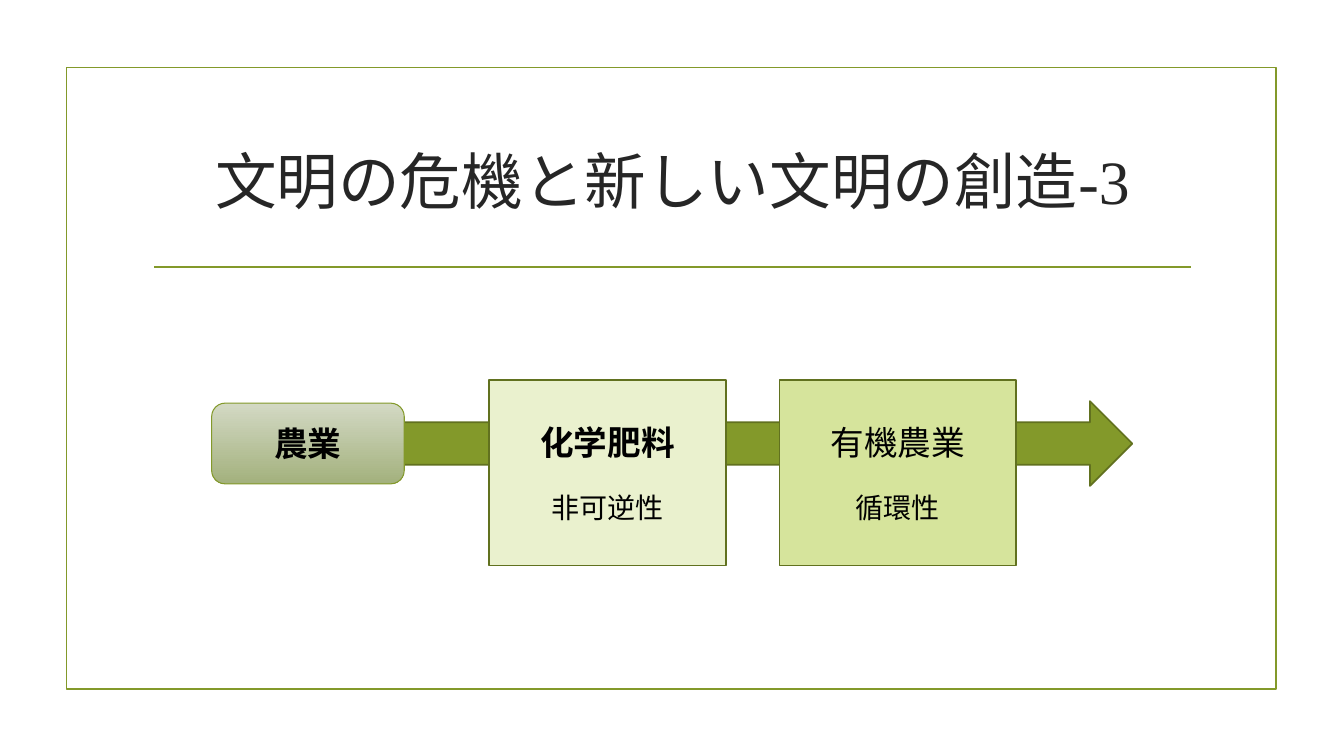
from lxml import etree
from pptx import Presentation
from pptx.dml.color import RGBColor
from pptx.enum.shapes import MSO_CONNECTOR, MSO_SHAPE
from pptx.enum.text import MSO_ANCHOR, MSO_AUTO_SIZE, PP_ALIGN
from pptx.oxml.ns import qn
from pptx.util import Inches, Pt

OLIVE = RGBColor(0x83, 0x99, 0x2A)
DARK_OLIVE = RGBColor(0x61, 0x71, 0x1F)
PALE_GREEN = RGBColor(0xEA, 0xF1, 0xCE)
LIGHT_GREEN = RGBColor(0xD6, 0xE4, 0x9C)
SAGE_TOP = RGBColor(0xD3, 0xD9, 0xC4)
SAGE_BOTTOM = RGBColor(0xA3, 0xB1, 0x7D)
CHARCOAL = RGBColor(0x26, 0x26, 0x26)
BLACK = RGBColor(0x00, 0x00, 0x00)

deck = Presentation()
deck.slide_width = Inches(13.33)
deck.slide_height = Inches(7.5)
column = deck.slide_width / 100
row = deck.slide_height / 100
page = deck.slides.add_slide(deck.slide_layouts[5])


def add_box(kind, left, top, width, height, line=DARK_OLIVE, weight=1.25, fill=None):
    """Add a preset shape, placed in percent of the slide's size."""
    box = page.shapes.add_shape(kind, int(left * column), int(top * row),
                                int(width * column), int(height * row))
    box.shadow.inherit = False
    box.line.color.rgb = line
    box.line.width = Pt(weight)
    if fill is None:
        box.fill.background()
    else:
        box.fill.solid()
        box.fill.fore_color.rgb = fill
    return box


def write(para, text, size, font="Arial", color=BLACK, bold=False, before=0):
    para.alignment = PP_ALIGN.CENTER
    para.space_before = Pt(before)
    span = para.add_run()
    span.text = text
    span.font.size = Pt(size)
    span.font.name = font
    span.font.bold = bold
    span.font.color.rgb = color


# Frame, title and rule
add_box(MSO_SHAPE.RECTANGLE, 4.95, 8.93, 90.02, 82.27, line=OLIVE)

title = page.shapes.title
title.left, title.width = int(10.65 * column), int(78.77 * column)
title.top, title.height = int(14.27 * row), int(19.07 * row)
title.text_frame.auto_size = MSO_AUTO_SIZE.NONE
title.text_frame.vertical_anchor = MSO_ANCHOR.MIDDLE
write(title.text_frame.paragraphs[0], "文明の危機と新しい文明の創造-3", 44,
      font="Times New Roman", color=CHARCOAL)

rule_y = int(35.33 * row)
rule = page.shapes.add_connector(MSO_CONNECTOR.STRAIGHT, int(11.48 * column), rule_y,
                                 int(88.6 * column), rule_y)
rule.line.color.rgb = OLIVE
rule.line.width = Pt(1.25)
etree.SubElement(rule.element.spPr, qn("a:effectLst"))

# Arrow running behind the stages
add_box(MSO_SHAPE.RIGHT_ARROW, 23.78, 53.07, 60.47, 11.2, fill=OLIVE)

start = add_box(MSO_SHAPE.ROUNDED_RECTANGLE, 15.75, 53.33, 14.33, 10.67,
                line=OLIVE, weight=0.75)
start.fill.gradient()
start.fill.gradient_angle = 270
for stop, color, position in zip(start.fill.gradient_stops, (SAGE_TOP, SAGE_BOTTOM), (0, 1)):
    stop.color.rgb = color
    stop.position = position
start.text_frame.vertical_anchor = MSO_ANCHOR.MIDDLE
write(start.text_frame.paragraphs[0], "農業", 24, bold=True)

stages = [
    ("化学肥料", "非可逆性", PALE_GREEN, True),
    ("有機農業", "循環性", LIGHT_GREEN, False),
]
for index, (method, trait, fill, bold) in enumerate(stages):
    stage = add_box(MSO_SHAPE.RECTANGLE, 36.38 + 21.61 * index, 50.27, 17.63, 24.53, fill=fill)
    frame = stage.text_frame
    frame.vertical_anchor = MSO_ANCHOR.MIDDLE
    write(frame.paragraphs[0], method, 24, bold=bold)
    write(frame.add_paragraph(), trait, 20, font="Times New Roman", before=20)

deck.save("out.pptx")
